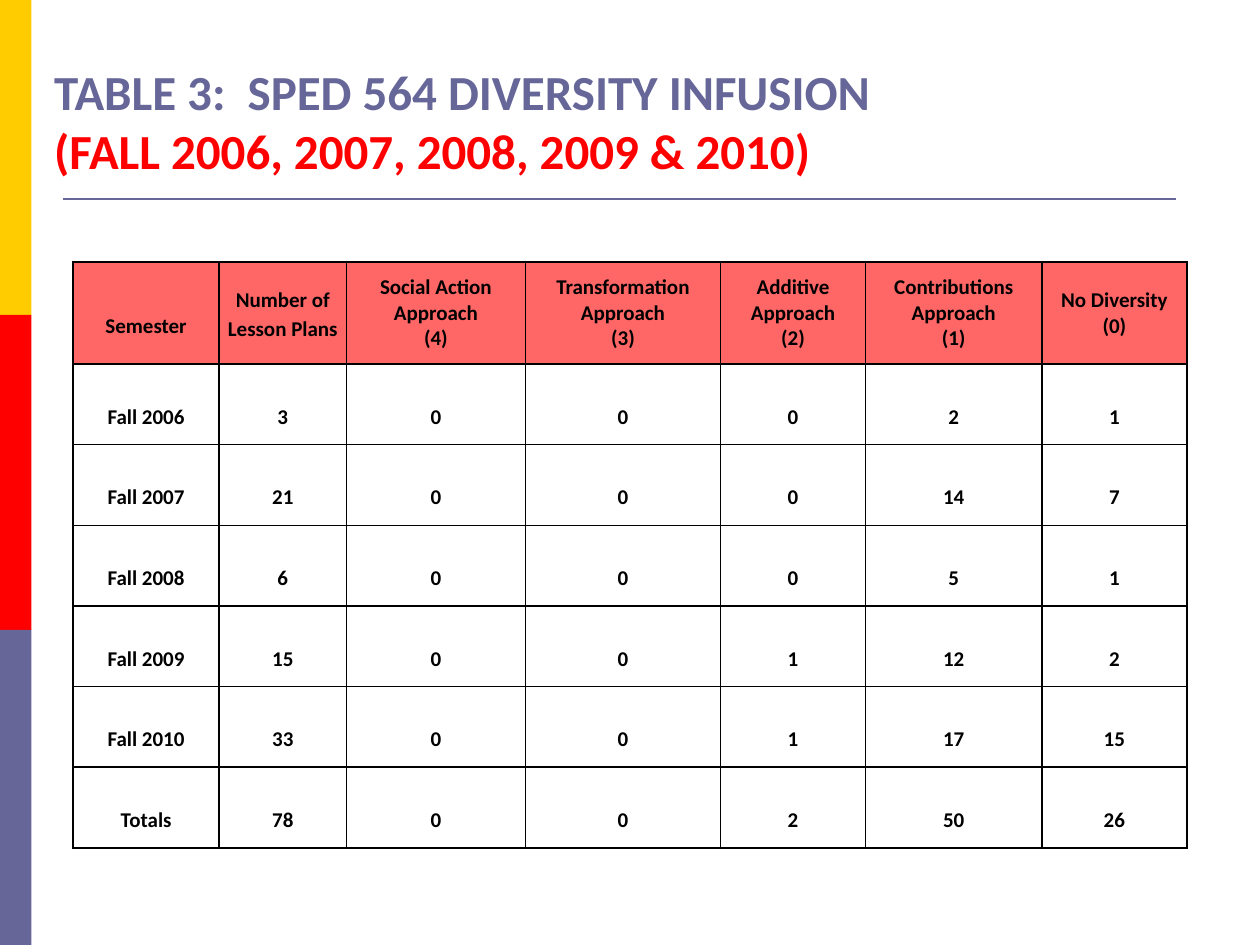
"""Build the SPED 564 diversity infusion table slide."""
from dataclasses import dataclass

from lxml import etree
from pptx import Presentation
from pptx.dml.color import RGBColor
from pptx.enum.shapes import MSO_CONNECTOR, MSO_SHAPE
from pptx.enum.text import MSO_ANCHOR, MSO_AUTO_SIZE, PP_ALIGN
from pptx.oxml.ns import qn
from pptx.util import Inches, Pt

RECTANGLE = MSO_SHAPE.RECTANGLE
STRAIGHT = MSO_CONNECTOR.STRAIGHT
MIDDLE = MSO_ANCHOR.MIDDLE
NO_FIT = MSO_AUTO_SIZE.NONE
LEFT, CENTER = PP_ALIGN.LEFT, PP_ALIGN.CENTER
TITLE_ONLY = 5


@dataclass(frozen=True)
class Theme:
    font: str = "Calibri"
    title_size: int = 28
    table_size: int = 12
    yellow: str = "FFCC00"
    red: str = "FF0000"
    slate: str = "666699"
    header: str = "FF6666"
    body: str = "FFFFFF"
    ink: str = "000000"


@dataclass(frozen=True)
class Band:
    top: float
    color: str


@dataclass(frozen=True)
class Column:
    width: float
    lines: tuple
    spacing: dict


THEME = Theme()
BAND_WIDTH, BAND_HEIGHT = 0.25, 2.5
BANDS = [Band(i * BAND_HEIGHT, color)
         for i, color in enumerate((THEME.yellow, THEME.red, THEME.slate))]
SINGLE = {}
LOOSE = {"line_spacing": 1.15, "space_after": Pt(10)}
DOUBLE = {"line_spacing": 2.0, "space_after": Pt(10)}
COLUMNS = [
    Column(1.16, ("Semester",), DOUBLE),
    Column(1.01, ("Number of Lesson Plans",), LOOSE),
    Column(1.42, ("Social Action Approach", "(4)"), SINGLE),
    Column(1.55, ("Transformation Approach", "(3)"), SINGLE),
    Column(1.15, ("Additive Approach", "(2)"), SINGLE),
    Column(1.4, ("Contributions Approach", "(1)"), SINGLE),
    Column(1.15, ("No Diversity", "(0)"), SINGLE),
]
COUNTS = {
    "Fall 2006": (3, 0, 0, 0, 2, 1),
    "Fall 2007": (21, 0, 0, 0, 14, 7),
    "Fall 2008": (6, 0, 0, 0, 5, 1),
    "Fall 2009": (15, 0, 0, 1, 12, 2),
    "Fall 2010": (33, 0, 0, 1, 17, 15),
}
HEADER_HEIGHT, ROW_HEIGHT = 0.81, 0.64
CELL_FORMAT = {"vertical_anchor": MIDDLE, "margin_left": Inches(0.04),
               "margin_right": Inches(0.04), "margin_top": 0, "margin_bottom": 0}


def apply(target, values: dict) -> None:
    """Set each named attribute on the target."""
    for name, value in values.items():
        setattr(target, name, value)


def add_run(p, text: str, size: int, color: str) -> None:
    """Append a bold run in the theme font."""
    r = p.add_run()
    r.text = text
    apply(r.font, {"name": THEME.font, "size": Pt(size), "bold": True})
    r.font.color.rgb = RGBColor.from_string(color)


def add_band(s, band: Band) -> None:
    """Draw one colour band on the left edge."""
    sp = s.shapes.add_shape(RECTANGLE, 0, Inches(band.top),
                            Inches(BAND_WIDTH), Inches(BAND_HEIGHT))
    sp.shadow.inherit = False
    sp.fill.solid()
    sp.fill.fore_color.rgb = RGBColor.from_string(band.color)
    sp.line.fill.background()


def add_rule(s) -> None:
    """Draw the line below the title."""
    line = s.shapes.add_connector(STRAIGHT, Inches(0.5), Inches(1.58),
                                  Inches(9.33), Inches(1.58))
    line.line.width = Pt(1.5)
    line.line.color.rgb = RGBColor.from_string(THEME.slate)
    etree.SubElement(line._element.spPr, qn("a:effectLst"))


def fill_title(s) -> None:
    """Place and write the two-line title."""
    sp = s.shapes.title
    apply(sp, {"left": Inches(0.33), "top": Inches(0.33),
               "width": Inches(9.33), "height": Inches(1.25)})
    tf = sp.text_frame
    apply(tf, {"word_wrap": True, "auto_size": NO_FIT, "vertical_anchor": MIDDLE})
    p = tf.paragraphs[0]
    p.alignment = LEFT
    add_run(p, "TABLE 3:  SPED 564 DIVERSITY INFUSION", THEME.title_size, THEME.slate)
    p.add_line_break()
    add_run(p, "(FALL 2006, 2007, 2008, 2009 & 2010)", THEME.title_size, THEME.red)


def add_borders(cell) -> None:
    """Outline a cell with thin ink lines, ahead of its fill."""
    tc_pr = cell._tc.get_or_add_tcPr()
    for i, side in enumerate(("lnL", "lnR", "lnT", "lnB")):
        ln = etree.Element(qn(f"a:{side}"), w=str(Pt(1)))
        fill = etree.SubElement(ln, qn("a:solidFill"))
        etree.SubElement(fill, qn("a:srgbClr"), val=THEME.ink)
        tc_pr.insert(i, ln)


def fill_cell(cell, lines: tuple, spacing: dict, color: str) -> None:
    """Write and format one table cell."""
    apply(cell, CELL_FORMAT)
    cell.fill.solid()
    cell.fill.fore_color.rgb = RGBColor.from_string(color)
    add_borders(cell)
    tf = cell.text_frame
    for i, line in enumerate(lines):
        p = tf.add_paragraph() if i else tf.paragraphs[0]
        apply(p, {"alignment": CENTER, **spacing})
        add_run(p, line, THEME.table_size, THEME.ink)


def add_counts_table(s) -> None:
    """Draw the lesson plan counts with their totals."""
    totals = [sum(values) for values in zip(*COUNTS.values())]
    rows = [(name, *values) for name, values in COUNTS.items()]
    rows.append(("Totals", *totals))
    height = HEADER_HEIGHT + ROW_HEIGHT * len(rows)
    table = s.shapes.add_table(
        len(rows) + 1, len(COLUMNS), Inches(0.58), Inches(2.08),
        Inches(sum(c.width for c in COLUMNS)), Inches(height)).table
    table.horz_banding = False
    for i, row in enumerate(table.rows):
        row.height = Inches(ROW_HEIGHT if i else HEADER_HEIGHT)
    for j, column in enumerate(COLUMNS):
        table.columns[j].width = Inches(column.width)
        fill_cell(table.cell(0, j), column.lines, column.spacing, THEME.header)
        for i, row in enumerate(rows, 1):
            fill_cell(table.cell(i, j), (str(row[j]),), DOUBLE, THEME.body)


def main() -> None:
    """Build and save the slide."""
    prs = Presentation()
    prs.slide_width, prs.slide_height = Inches(10), Inches(7.5)
    s = prs.slides.add_slide(prs.slide_layouts[TITLE_ONLY])
    for band in BANDS:
        add_band(s, band)
    add_rule(s)
    fill_title(s)
    add_counts_table(s)
    prs.save("out.pptx")


if __name__ == "__main__":
    main()
